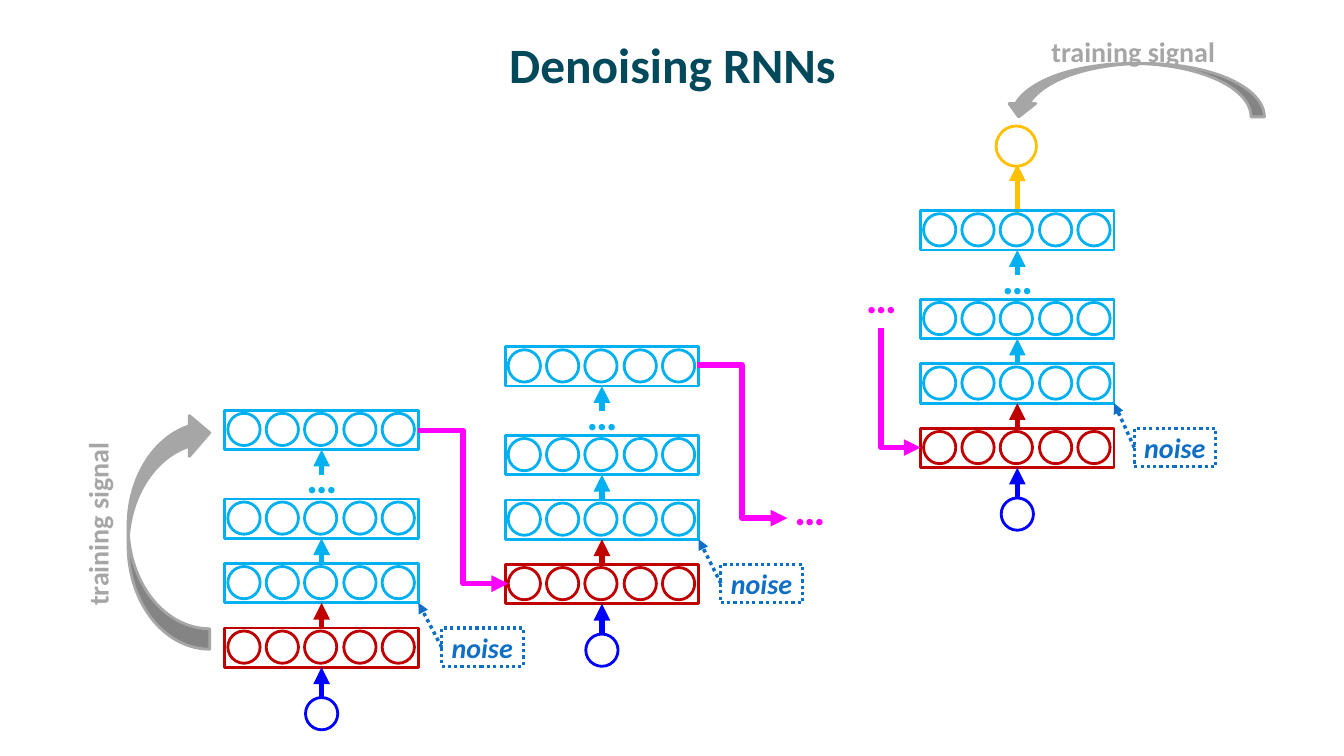
"""Build the "Denoising RNNs" slide: three recurrent stacks with noise and training signals."""
from lxml import etree
from pptx import Presentation
from pptx.dml.color import RGBColor
from pptx.enum.dml import MSO_LINE
from pptx.enum.shapes import MSO_CONNECTOR, MSO_SHAPE
from pptx.enum.text import MSO_ANCHOR, MSO_AUTO_SIZE, PP_ALIGN
from pptx.oxml.ns import qn
from pptx.util import Pt

PX = 9144
FONT = "Calibri"
OVAL, RECTANGLE = MSO_SHAPE.OVAL, MSO_SHAPE.RECTANGLE
CURVED_ARROW = MSO_SHAPE.CURVED_RIGHT_ARROW
STRAIGHT, ELBOW = MSO_CONNECTOR.STRAIGHT, MSO_CONNECTOR.ELBOW
DOTTED = MSO_LINE.ROUND_DOT
TEAL = RGBColor(0x03, 0x49, 0x5C)
GOLD = RGBColor(0xFF, 0xC0, 0x00)
BLUE = RGBColor(0x00, 0x00, 0xFF)
RED = RGBColor(0xC0, 0x00, 0x00)
CYAN = RGBColor(0x00, 0xB0, 0xF0)
MAGENTA = RGBColor(0xFF, 0x00, 0xFF)
NOISE_BLUE = RGBColor(0x0F, 0x6F, 0xC6)
GRAY = RGBColor(0xA6, 0xA6, 0xA6)


def add_box(shapes, preset, box, color, weight=2, text="", size=20):
    """Add an outlined shape, or a text box when no preset is given."""
    lengths = [length * PX for length in box]
    if preset is None:
        shape = shapes.add_textbox(*lengths)
    else:
        shape = shapes.add_shape(preset, *lengths)
        shape.shadow.inherit = False
        shape.fill.background()
        shape.line.color.rgb = color
        shape.line.width = Pt(weight)
    if text:
        frame = shape.text_frame
        frame.text = text
        frame.word_wrap = False
        frame.auto_size = MSO_AUTO_SIZE.SHAPE_TO_FIT_TEXT
        frame.paragraphs[0].alignment = PP_ALIGN.LEFT
        font = frame.paragraphs[0].runs[0].font
        font.name, font.size, font.bold = FONT, Pt(size), True
        font.color.rgb = color
    return shape


def add_arrow(shapes, kind, ends, color, weight=4):
    """Add a connector with a triangle at its end."""
    arrow = shapes.add_connector(kind, *[length * PX for length in ends])
    arrow.line.color.rgb = color
    arrow.line.width = Pt(weight)
    line = arrow.line._get_or_add_ln()
    etree.SubElement(line, qn("a:tailEnd"), type="triangle")
    etree.SubElement(arrow.element.spPr, qn("a:effectLst"))
    return arrow


presentation = Presentation()
presentation.slide_width = 1333 * PX
presentation.slide_height = 750 * PX
slide = presentation.slides.add_slide(presentation.slide_layouts[5])
shapes = slide.shapes

title = shapes.title
title.left, title.top, title.width, title.height = 67 * PX, 17 * PX, 1200 * PX, 92 * PX
frame = title.text_frame
frame.text = "Denoising RNNs"
frame.auto_size = MSO_AUTO_SIZE.NONE
frame.vertical_anchor = MSO_ANCHOR.MIDDLE
frame.margin_left = frame.margin_right = 11 * PX
frame.margin_top = frame.margin_bottom = 6 * PX
frame.paragraphs[0].alignment = PP_ALIGN.CENTER
font = frame.paragraphs[0].runs[0].font
font.name, font.size, font.bold = FONT, Pt(35.3), True
font.color.rgb = TEAL

add_box(shapes, OVAL, (988, 125, 40, 40), GOLD)
add_arrow(shapes, STRAIGHT, (1009, 211, 1009, 163), GOLD)

LAYERS = [(0, RED), (-64, CYAN), (-128, CYAN), (-216, CYAN)]
STACK_ARROWS = [(69, 39, BLUE), (0, -25, RED), (-64, -89, CYAN), (-152, -177, CYAN)]
STACKS = [(223, 623, 438), (501, 560, 715), (913, 425, 1125)]
for left, top, noise_left in STACKS:
    stack = shapes.add_group_shape().shapes
    center = left + 96
    add_box(stack, OVAL, (center - 16, top + 69, 32, 32), BLUE)
    for offset, color in LAYERS:
        for unit in range(5):
            unit_left = left + 3 + round(38.25 * unit)
            add_box(stack, OVAL, (unit_left, top + offset + 3, 32, 32), color)
        add_box(stack, RECTANGLE, (left, top + offset, 192, 39), color)
    for start, end, color in STACK_ARROWS:
        add_arrow(stack, STRAIGHT, (center, top + start, center, top + end), color)
    add_box(stack, None, (left + 71, top - 181, 41, 50), CYAN, text="…", size=31)

    noise = add_box(shapes, RECTANGLE, (noise_left, top, 81, 38), NOISE_BLUE, 2.25, "noise")
    noise.line.dash_style = DOTTED
    noise.text_frame.margin_left = noise.text_frame.margin_right = 10 * PX
    noise.text_frame.margin_top = noise.text_frame.margin_bottom = 2 * PX
    noise.text_frame.paragraphs[0].runs[0].font.italic = True
    noise_ends = (noise_left, top + 19, left + 192, top - 25)
    noise_arrow = add_arrow(shapes, STRAIGHT, noise_ends, NOISE_BLUE, 2.5)
    noise_arrow.line.dash_style = DOTTED

for ends in [(415, 427, 504, 579), (691, 362, 781, 514)]:
    add_arrow(shapes, ELBOW, ends, MAGENTA)
last_link = add_arrow(shapes, ELBOW, (834, 365, 953, 404), MAGENTA)
last_link.element.spPr.find(qn("a:prstGeom")).set("prst", "bentConnector2")
transform = last_link.element.spPr.find(qn("a:xfrm"))
transform.set("rot", "16200000")
transform.set("flipH", "1")
for left, top in [(778, 473), (849, 263)]:
    add_box(shapes, None, (left, top, 51, 62), MAGENTA, text="…", size=31)

SIGNALS = [
    ((127, 409, 81, 235), 180, True, (5, 497, 184, 44), 270),
    ((1099, -39, 53, 257), 90, False, (1033, 29, 201, 29), 0),
]
for arrow_box, arrow_rotation, flipped, label_box, label_rotation in SIGNALS:
    signal = add_box(shapes, CURVED_ARROW, arrow_box, GRAY)
    signal.fill.solid()
    signal.fill.fore_color.rgb = GRAY
    signal.rotation = arrow_rotation
    if flipped:
        signal.element.spPr.find(qn("a:xfrm")).set("flipH", "1")
    label = add_box(shapes, None, label_box, GRAY, text="training signal")
    label.rotation = label_rotation

presentation.save("out.pptx")
